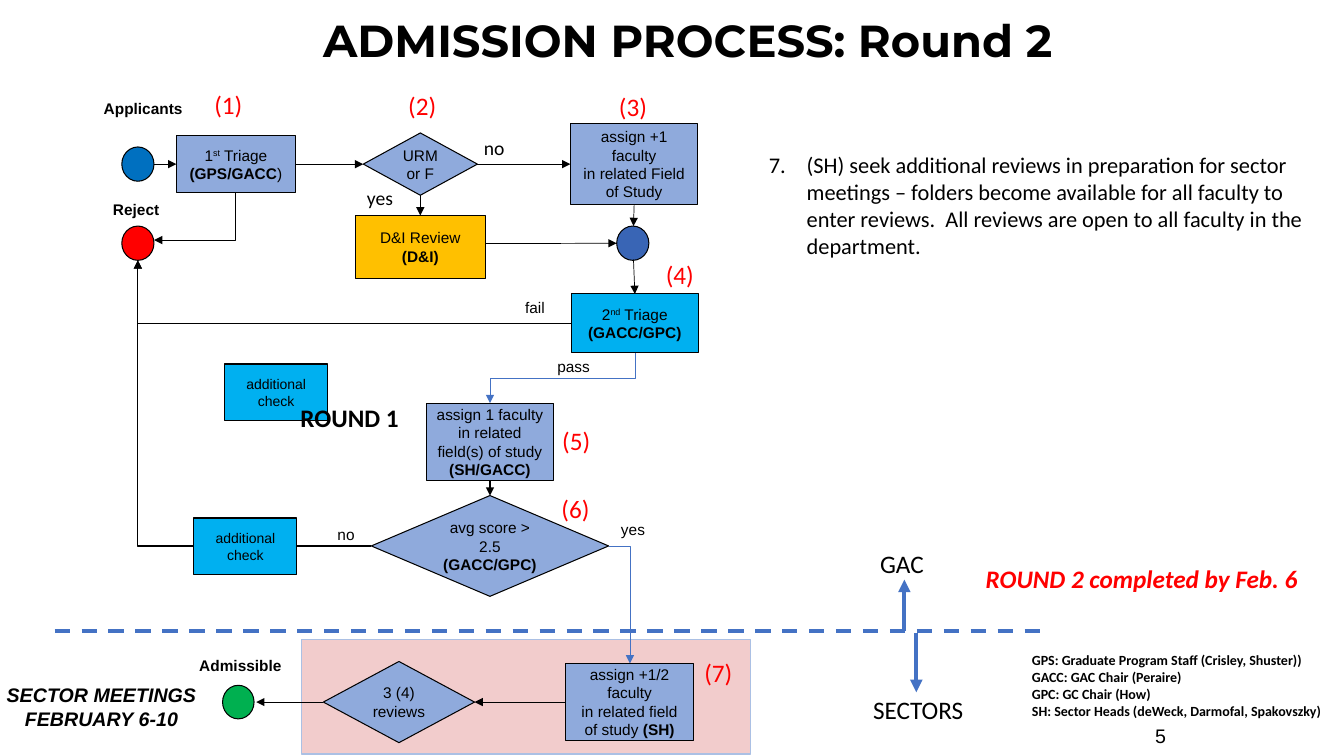
"""Build the slide that charts round 2 of the admission process."""
from dataclasses import dataclass

from lxml import etree
from pptx import Presentation
from pptx.dml import color
from pptx.enum import dml, shapes, text
from pptx.oxml import ns
from pptx.util import Pt

HUES = {
    "black": "000000", "red": "FF0000", "pale": "8FAADC", "sky": "00B0F0",
    "gold": "FFC000", "blue": "0070C0", "navy": "3965B5", "green": "00B050",
    "line": "4472C4", "wine": "C00000", "edge": "ABC0E4",
}
KINDS = shapes.MSO_SHAPE
RECT, OVAL, GEM = KINDS.RECTANGLE, KINDS.OVAL, KINDS.FLOWCHART_DECISION
LEFT, MID, RIGHT = text.PP_ALIGN.LEFT, text.PP_ALIGN.CENTER, text.PP_ALIGN.RIGHT
TOP, HALF = text.MSO_ANCHOR.TOP, text.MSO_ANCHOR.MIDDLE
UP, WEST, DOWN, EAST = range(4)


@dataclass
class Node:
    """A filled shape of the flow chart; *bold* and ^raised^ mark runs."""
    name: str
    kind: int
    box: tuple
    fill: str
    words: str = ""
    size: float = 11
    edge: str = "black"
    width: float = 0.75


@dataclass
class Arrow:
    """A straight line between points or (node, side) pairs."""
    start: tuple
    end: tuple
    width: float = 0.75
    hue: str = "black"
    head: bool = True


@dataclass
class Bend:
    """An elbow arrow, turned clockwise by some degrees."""
    start: tuple
    end: tuple
    turn: int
    form: str = "bentConnector2"
    width: float = 0.75
    hue: str = "black"


@dataclass
class Label:
    """A free text box."""
    words: str
    box: tuple
    size: float = 11
    font: str = "Arial"
    hue: str = "black"
    bold: bool = False
    slant: bool = False
    align: int = LEFT
    anchor: int = TOP
    wrap: bool = True


BAND = Node("band", RECT, (215.5, 457, 320.5, 81.5), "wine", edge="edge", width=1)
NODES = [
    Node("start", OVAL, (87, 105, 23, 24.5), "blue"),
    Node("reject", OVAL, (87, 161.5, 23, 24.5), "red"),
    Node("merge", OVAL, (440.5, 161.5, 23, 24.5), "navy"),
    Node("admit", OVAL, (159, 489.5, 22.5, 24), "green"),
    Node("first", RECT, (126, 97, 85, 40.5), "pale", "1^st^ Triage *(GPS/GACC*)"),
    Node("urm", GEM, (259.5, 95, 81.5, 44.5), "pale", "URM or F"),
    Node("assign", RECT, (407.5, 88.5, 91, 57.5), "pale",
         "assign +1 faculty\nin related Field of Study"),
    Node("review", RECT, (254, 154, 92.5, 45), "gold", "D&I Review\n*(D&I)*"),
    Node("second", RECT, (408, 210, 91, 42), "sky", "2^nd^ Triage\n*(GACC/GPC)*"),
    Node("field", RECT, (304.5, 288, 91, 55), "pale",
         "assign 1 faculty\nin related field(s) of study *(SH/GACC)*"),
    Node("score", GEM, (265.25, 354, 169.5, 72), "pale",
         "avg score > 2.5\n*(GACC/GPC)*"),
    Node("check", RECT, (160.5, 260, 73.5, 40.5), "sky", "additional check", 10),
    Node("again", RECT, (138.5, 370, 73.5, 40.5), "sky", "additional check", 10),
    Node("sector", RECT, (404, 474, 91.5, 55), "pale",
         "assign +1/2 faculty\nin related field of study *(SH)*"),
    Node("reads", GEM, (231, 472.5, 108, 58), "pale", "3 (4) reviews"),
]
ARROWS = [
    Arrow((110, 117.25), ("first", WEST)),
    Arrow(("first", EAST), ("urm", WEST), 0.5),
    Arrow(("urm", EAST), ("assign", WEST), 0.5),
    Arrow(("urm", DOWN), ("review", UP), 0.5),
    Arrow(("assign", DOWN), (452.5, 161.5), 0.5),
    Arrow((346.5, 174), (440.5, 173.75), 0.5),
    Arrow((452.5, 185.5), ("second", UP), 0.5),
    Arrow(("field", DOWN), ("score", UP)),
    Arrow(("sector", WEST), ("reads", EAST)),
    Arrow(("reads", WEST), (183, 501.5)),
    Arrow((39, 450.5), (744, 450.5), 2.75, "line", False),
    Arrow((646, 450.5), (646, 414), 3, "line"),
    Arrow((654.5, 452), (654.5, 494.5), 3, "line"),
]
BENDS = [
    Bend((168.5, 137.5), (110, 171.5), 90),
    Bend((265.25, 390), (98.5, 186), 180),
    Bend((408, 231), (98.5, 186), 180),
    Bend((434.75, 390), (450, 474), 0, width=0.5, hue="line"),
    Bend((453.5, 252), (350, 288), 90, "bentConnector3", 0.5, "line"),
]
MARKS = [(146, 60.5), (284.5, 61), (435, 62), (468.5, 182), (394.5, 300),
         (394, 348.5), (496, 466)]
LABELS = [
    Label("5", (800.5, 514, 39.5, 22.5), 14, align=RIGHT, anchor=HALF),
    Label("SECTOR MEETINGS FEBRUARY 6-10", (-34.5, 484.5, 214, 41), 14,
          bold=True, slant=True, align=MID),
    Label("Applicants", (67, 67.5, 103, 21), bold=True),
    Label("Reject", (62, 139.5, 70.5, 21), bold=True, align=MID),
    Label("Admissible", (129.5, 465, 84.5, 21), bold=True, align=MID),
    Label("yes", (436.5, 368, 36.5, 21)),
    Label("no", (234, 371.5, 31, 21)),
    Label("pass", (391, 251.5, 45.5, 21)),
    Label("fail", (368, 209.5, 45.5, 21)),
    Label("no", (338.5, 93.5, 29.5, 24.5), 14, "Calibri", wrap=False),
    Label("yes", (255, 129, 33, 24.5), 14, "Calibri", wrap=False),
    Label("GAC", (621.5, 388, 46, 29), 18, "Calibri", wrap=False),
    Label("SECTORS", (616.5, 492.5, 79, 29), 18, "Calibri", wrap=False),
    Label("ROUND 1", (207.5, 283.5, 85.5, 29), 18, "Calibri", bold=True, wrap=False),
    Label("ROUND 2 completed by Feb. 6", (697, 399, 631.5, 29), 18, "Calibri",
          "red", True, True),
    Label("GPS: Graduate Program Staff (Crisley, Shuster))\n"
          "GACC: GAC Chair (Peraire)\nGPC: GC Chair (How)\n"
          "SH: Sector Heads (deWeck, Darmofal, Spakovszky)",
          (730, 462, 497.5, 55.5), 10, "Calibri", bold=True),
] + [Label(f"({n})", (*spot, 34.5, 29), 18, "Calibri", "red", wrap=False)
     for n, spot in enumerate(MARKS, 1)]
TITLE = Label("ADMISSION PROCESS: Round 2", (45.5, 1.5, 892, 41), 32,
              "Montserrat", bold=True, align=MID)
STEP = Label("(SH) seek additional reviews in preparation for sector meetings – "
             "folders become available for all faculty to enter reviews.  All "
             "reviews are open to all faculty in the department.",
             (542, 104.5, 418.5, 85.5), 16, "Calibri")


def tint(name: str) -> color.RGBColor:
    """Return a named colour."""
    return color.RGBColor.from_string(HUES[name])


def add(parent, tag: str, **attrs: str):
    """Append a drawing element to its parent."""
    return etree.SubElement(parent, ns.qn(f"a:{tag}"), attrs)


def write(frame, label: Label) -> None:
    """Fill a text frame with marked-up paragraphs."""
    frame.word_wrap, frame.vertical_anchor = label.wrap, label.anchor
    for n, line in enumerate(label.words.split("\n")):
        para = frame.add_paragraph() if n else frame.paragraphs[0]
        para.alignment = label.align
        font = para.font
        font.name, font.size = label.font, Pt(label.size)
        font.bold, font.italic = label.bold, label.slant
        font.color.rgb = tint(label.hue)
        for b, part in enumerate(line.split("*")):
            for s, bit in enumerate(part.split("^")):
                if bit:
                    run = para.add_run()
                    run.text = bit
                    if b % 2:
                        run.font.bold = True
                    if s % 2:
                        run._r.get_or_add_rPr().set("baseline", "30000")


def place(holder, label: Label) -> None:
    """Move a placeholder and write its text."""
    holder.left, holder.top, holder.width, holder.height = map(Pt, label.box)
    holder.text_frame.auto_size = text.MSO_AUTO_SIZE.NONE
    write(holder.text_frame, label)


def draw_node(slide, node: Node):
    """Draw a shape with its words and return it."""
    shape = slide.shapes.add_shape(node.kind, *map(Pt, node.box))
    shape.shadow.inherit = False
    shape.fill.solid()
    shape.fill.fore_color.rgb = tint(node.fill)
    shape.line.color.rgb = tint(node.edge)
    shape.line.width = Pt(node.width)
    if node.words:
        write(shape.text_frame, Label(node.words, node.box, node.size,
                                      align=MID, anchor=HALF))
    return shape


def style(wire, hue: str, width: float, head: bool = True) -> None:
    """Set the line of a connector and drop its shadow."""
    wire.line.color.rgb, wire.line.width = tint(hue), Pt(width)
    if head:
        add(wire.line._get_or_add_ln(), "tailEnd", type="triangle")
    else:
        wire.line.dash_style = dml.MSO_LINE.DASH
    add(wire._element.spPr, "effectLst")


def draw_arrow(slide, arrow: Arrow, made: dict) -> None:
    """Draw a straight arrow, joined to nodes where named."""
    ends = [end if end[0] not in made else (0, 0) for end in (arrow.start, arrow.end)]
    wire = slide.shapes.add_connector(shapes.MSO_CONNECTOR.STRAIGHT,
                                      *map(Pt, ends[0] + ends[1]))
    for end, join in ((arrow.start, wire.begin_connect), (arrow.end, wire.end_connect)):
        if end[0] in made:
            join(made[end[0]], end[1])
    style(wire, arrow.hue, arrow.width, arrow.head)


def draw_bend(slide, bend: Bend) -> None:
    """Draw an elbow arrow in its turned frame."""
    (x, y), (p, q) = bend.start, bend.end
    w, h = abs(p - x), abs(q - y)
    if bend.turn == 90:
        w, h = h, w
    left, top = (x + p - w) / 2, (y + q - h) / 2
    wire = slide.shapes.add_connector(shapes.MSO_CONNECTOR.ELBOW,
                                      *map(Pt, (left, top, left + w, top + h)))
    props = wire._element.spPr
    props.find(ns.qn("a:prstGeom")).set("prst", bend.form)
    props.find(ns.qn("a:xfrm")).set("rot", str(bend.turn * 60000))
    style(wire, bend.hue, bend.width)


def draw_label(slide, label: Label) -> None:
    """Draw a text box."""
    write(slide.shapes.add_textbox(*map(Pt, label.box)).text_frame, label)


def main() -> None:
    """Build and save the deck."""
    deck = Presentation()
    deck.slide_width, deck.slide_height = Pt(960), Pt(540)
    slide = deck.slides.add_slide(deck.slide_layouts[1])
    title, body = slide.placeholders
    place(title, TITLE)
    title.text_frame.paragraphs[0].line_spacing = 1.1
    para = body.text_frame.paragraphs[0]
    props = para._p.get_or_add_pPr()
    props.set("marL", str(Pt(27)))
    props.set("indent", str(Pt(-27)))
    add(props, "buFont", typeface="Calibri")
    add(props, "buAutoNum", type="arabicPeriod", startAt="7")
    place(body, STEP)
    para.space_before = Pt(0)
    band = draw_node(slide, BAND)
    add(band.fill._xPr.find(".//" + ns.qn("a:srgbClr")), "alpha", val="20000")
    for bend in BENDS:
        draw_bend(slide, bend)
    made = {node.name: draw_node(slide, node) for node in NODES}
    for arrow in ARROWS:
        draw_arrow(slide, arrow, made)
    for label in LABELS:
        draw_label(slide, label)
    deck.save("out.pptx")


if __name__ == "__main__":
    main()
